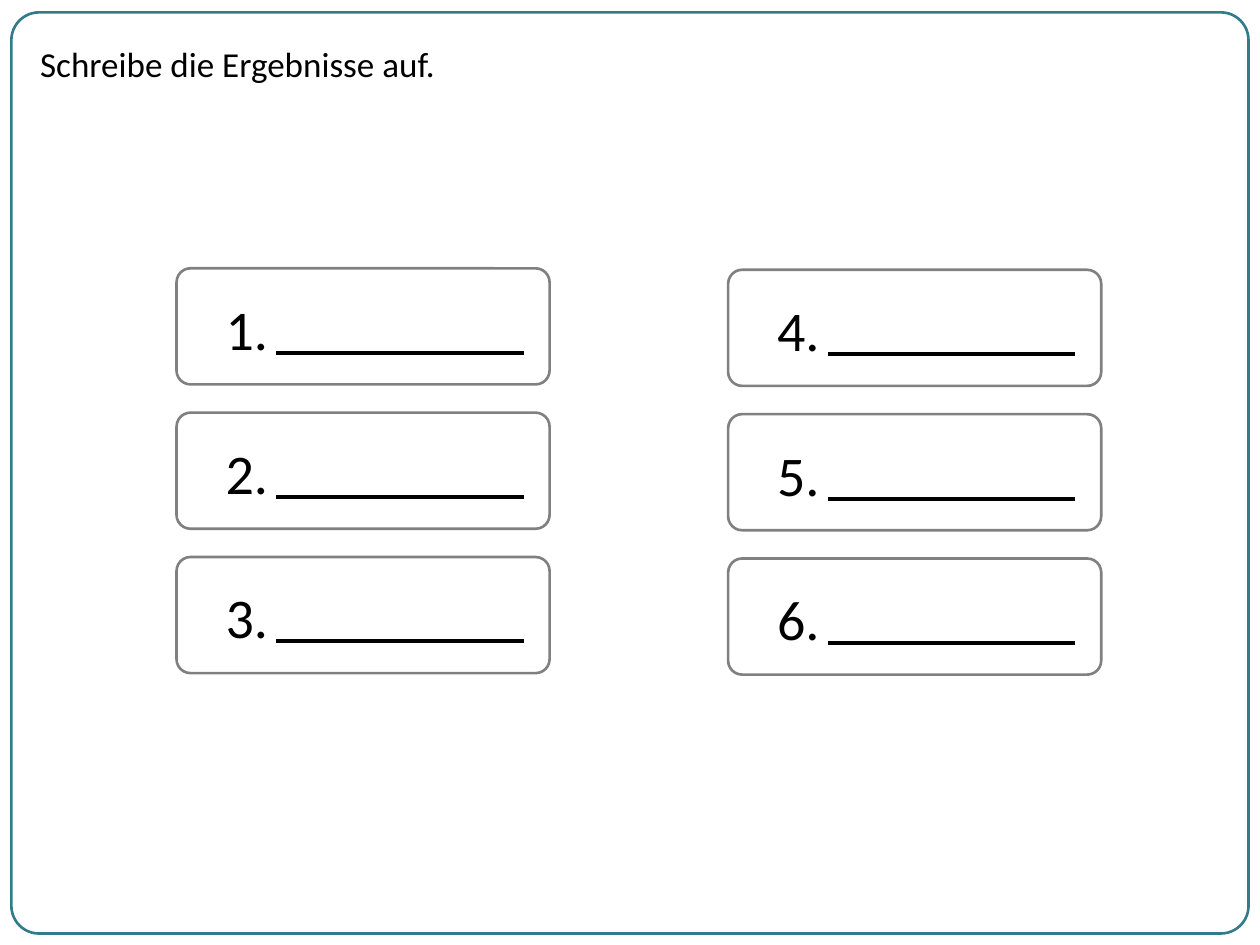
from lxml.etree import SubElement
from pptx import Presentation
from pptx.dml.color import RGBColor
from pptx.enum.shapes import MSO_CONNECTOR, MSO_SHAPE
from pptx.enum.text import MSO_ANCHOR, MSO_AUTO_SIZE, PP_ALIGN
from pptx.oxml.ns import qn
from pptx.util import Cm, Pt

COLORS = {"border": "327B8A", "card": "808080", "ink": "000000"}
FONT = "Calibri"

CARD_WIDTH, CARD_HEIGHT = Cm(7.52), Cm(2.34)
CARD_PITCH = Cm(2.91)


def color(name):
    return RGBColor.from_string(COLORS[name])


def write_text(shape, text, size):
    shape.text_frame.word_wrap = True
    paragraph = shape.text_frame.paragraphs[0]
    paragraph.text = text
    paragraph.alignment = PP_ALIGN.LEFT
    font = paragraph.runs[0].font
    font.name, font.size = FONT, Pt(size)
    font.color.rgb = color("ink")


def add_rounded_box(shapes, left, top, width, height, rounding, line=None):
    shape = shapes.add_shape(MSO_SHAPE.ROUNDED_RECTANGLE, left, top, width, height)
    shape.adjustments[0] = rounding
    shape.shadow.inherit = False
    shape.fill.background()
    if line:
        shape.line.color.rgb = color(line)
        shape.line.width = Pt(1.5)
    else:
        shape.line.fill.background()
    return shape


def add_answer_card(shapes, left, top, number):
    # Line to write the result on
    line_left, line_top = left + Cm(2.01), top + Cm(1.7)
    line = shapes.add_connector(
        MSO_CONNECTOR.STRAIGHT, line_left, line_top, line_left + Cm(4.99), line_top)
    line.line.color.rgb = color("ink")
    line.line.width = Pt(2.25)
    SubElement(line.element.spPr, qn("a:effectLst"))

    # Task number
    label = add_rounded_box(
        shapes, left + Cm(0.69), top + Cm(0.03), Cm(5.64), CARD_HEIGHT, 0.07)
    label.text_frame.vertical_anchor = MSO_ANCHOR.MIDDLE
    write_text(label, f"{number}.", 32)

    # Card outline
    add_rounded_box(shapes, left, top, CARD_WIDTH, CARD_HEIGHT, 0.12, "card")


def add_answer_column(slide, left, top, numbers):
    group = slide.shapes.add_group_shape()
    for row, number in enumerate(numbers):
        add_answer_card(group.shapes, left, top + row * CARD_PITCH, number)


def add_instruction(slide, left, top, width, height):
    text_box = slide.shapes.add_textbox(left, top, width, height)
    write_text(text_box, "Schreibe die Ergebnisse auf.", 20)
    text_box.text_frame.auto_size = MSO_AUTO_SIZE.SHAPE_TO_FIT_TEXT


def main():
    presentation = Presentation()
    presentation.slide_width, presentation.slide_height = Cm(25.4), Cm(19.05)
    slide = presentation.slides.add_slide(presentation.slide_layouts[6])

    # Page border
    add_rounded_box(
        slide.shapes, Cm(0.23), Cm(0.25), Cm(24.94), Cm(18.57), 0.03, "border")

    # Two columns of answers
    add_answer_column(slide, Cm(14.68), Cm(5.44), range(4, 7))
    add_answer_column(slide, Cm(3.56), Cm(5.41), range(1, 4))

    add_instruction(slide, Cm(0.56), Cm(0.74), Cm(18.19), Cm(1.12))
    presentation.save("out.pptx")


if __name__ == "__main__":
    main()
